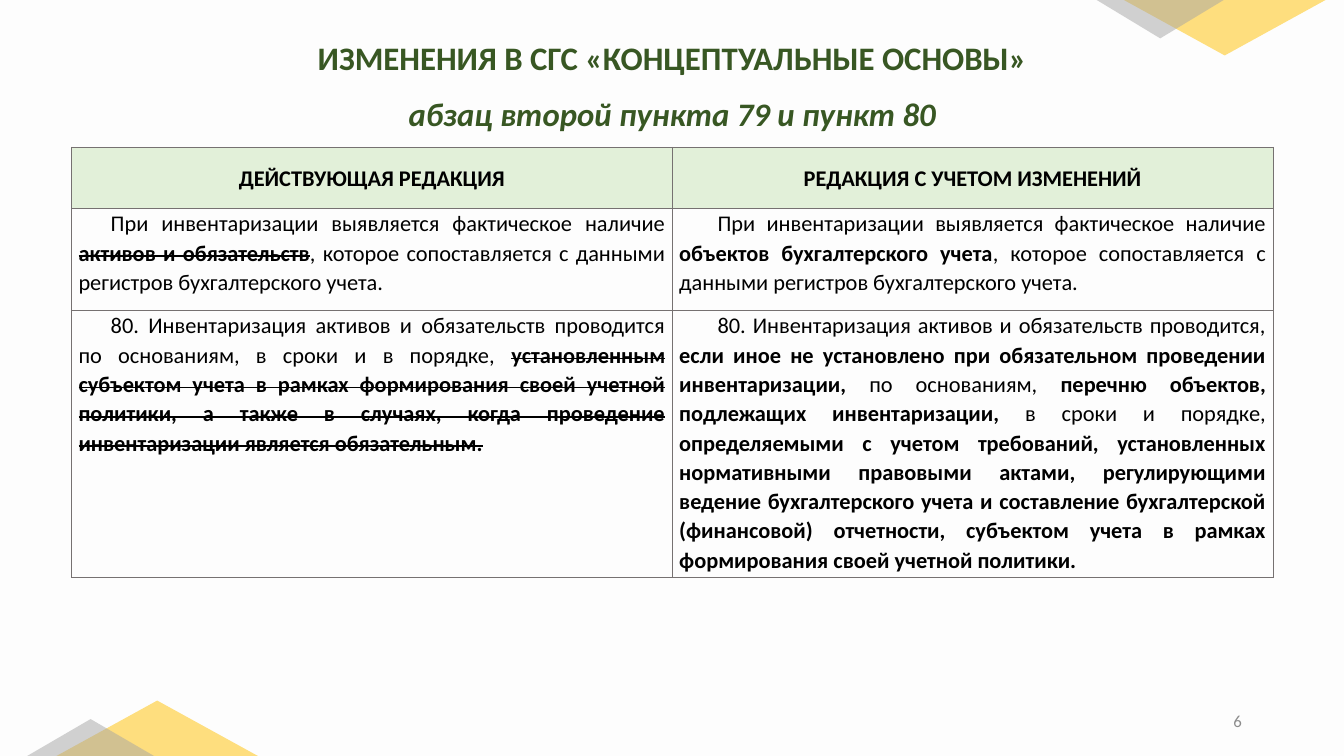
"""Build a slide that compares the current and the amended wording of a standard."""
from lxml import etree
from pptx import Presentation
from pptx import util as u
from pptx.dml.color import RGBColor
from pptx.enum import shapes, text
from pptx.oxml.ns import qn

THEME = {
    "font": "Calibri",
    "size": {"heading": 23.4, "table": 16, "number": 12},
    "color": {
        "page": "FDFDFD", "heading": "385723", "table": "000000", "number": "8C8C8C",
        "header": "E2F0D9", "border": "767171", "gold": "FFC000", "gray": "A5A5A5",
    },
}
STYLES = {
    "plain": {"bold": False, "italic": False},
    "new": {"bold": True, "italic": False},
    "old": {"bold": True, "italic": False},
    "accent": {"bold": True, "italic": True},
}


def color(name):
    return RGBColor.from_string(THEME["color"][name])


def write(frame, role, spans, layout, anchor):
    frame.word_wrap = True
    frame.vertical_anchor = anchor
    para = frame.paragraphs[0]
    for name, value in layout.items():
        setattr(para, name, value)
    for words, style in spans:
        span = para.add_run()
        span.text = words
        values = {"name": THEME["font"], "size": u.Pt(THEME["size"][role]), **STYLES[style]}
        for name, value in values.items():
            setattr(span.font, name, value)
        span.font.color.rgb = color(role)
        if style == "old":
            span._r.get_or_add_rPr().set("strike", "sngStrike")


deck = Presentation()
deck.slide_width, deck.slide_height = u.Pt(960), u.Pt(540)
page = deck.slides.add_slide(deck.slide_layouts[0])
page.background.fill.solid()
page.background.fill.fore_color.rgb = color("page")

middle = text.MSO_ANCHOR.MIDDLE
center = {"alignment": text.PP_ALIGN.CENTER, "space_before": u.Pt(0)}
headings = [
    (23, 39.6, 0.9, "ИЗМЕНЕНИЯ В СГС «КОНЦЕПТУАЛЬНЫЕ ОСНОВЫ»", "new"),
    (68.4, 30.2, 0.8, "абзац второй пункта 79 и пункт 80", "accent"),
]
for box, (top, height, spacing, words, style) in zip(page.placeholders, headings):
    box.left, box.top, box.width, box.height = u.Pt(40.3), u.Pt(top), u.Pt(879.8), u.Pt(height)
    box.text_frame.auto_size = text.MSO_AUTO_SIZE.NONE
    write(box.text_frame, "heading", [(words, style)], {**center, "line_spacing": spacing}, middle)

number = page.shapes.add_textbox(u.Pt(678.2), u.Pt(500.4), u.Pt(216), u.Pt(28.8))
write(number.text_frame, "number", [("6", "plain")], {"alignment": text.PP_ALIGN.RIGHT}, middle)

rows = [
    (43.9, [[("ДЕЙСТВУЮЩАЯ РЕДАКЦИЯ", "new")], [("РЕДАКЦИЯ С УЧЕТОМ ИЗМЕНЕНИЙ", "new")]]),
    (72.9, [
        [
            ("При инвентаризации выявляется фактическое наличие ", "plain"),
            ("активов и обязательств", "old"),
            (", которое сопоставляется с данными регистров бухгалтерского учета.", "plain"),
        ],
        [
            ("При инвентаризации выявляется фактическое наличие ", "plain"),
            ("объектов бухгалтерского учета", "new"),
            (", которое сопоставляется с данными регистров бухгалтерского учета.", "plain"),
        ],
    ]),
    (190.6, [
        [
            ("80. Инвентаризация активов и обязательств проводится по основаниям, "
             "в сроки и в порядке, ", "plain"),
            ("установленным субъектом учета в рамках формирования своей учетной политики, "
             "а также в случаях, когда проведение инвентаризации является обязательным.", "old"),
        ],
        [
            ("80. Инвентаризация активов и обязательств проводится, ", "plain"),
            ("если иное не установлено при обязательном проведении инвентаризации,", "new"),
            (" по основаниям, ", "plain"),
            ("перечню объектов, подлежащих инвентаризации,", "new"),
            (" в сроки и порядке, ", "plain"),
            ("определяемыми с учетом требований, установленных нормативными правовыми актами, "
             "регулирующими ведение бухгалтерского учета и составление бухгалтерской "
             "(финансовой) отчетности, субъектом учета в рамках формирования своей "
             "учетной политики.", "new"),
        ],
    ]),
]
indents = [23, 27.4]
margins = {"margin_left": 5, "margin_right": 5, "margin_top": 0, "margin_bottom": 0}
table = page.shapes.add_table(
    len(rows), 2, u.Pt(51.1), u.Pt(105.1), u.Pt(858.2), u.Pt(307.4)
).table
table.first_row = table.horz_banding = False
for column in table.columns:
    column.width = u.Pt(429.1)
for r, (height, cells) in enumerate(rows):
    table.rows[r].height = u.Pt(height)
    for c, spans in enumerate(cells):
        cell = table.cell(r, c)
        for name, value in margins.items():
            setattr(cell, name, u.Pt(value))
        borders = cell._tc.get_or_add_tcPr()
        for side in ("a:lnL", "a:lnR", "a:lnT", "a:lnB"):
            line = etree.SubElement(borders, qn(side), w=str(u.Pt(0.25)))
            paint = etree.SubElement(line, qn("a:solidFill"))
            etree.SubElement(paint, qn("a:srgbClr"), val=THEME["color"]["border"])
        if r == 0:
            cell.fill.solid()
            cell.fill.fore_color.rgb = color("header")
            layout, anchor = center, middle
        else:
            cell.fill.background()
            layout, anchor = {"alignment": text.PP_ALIGN.JUSTIFY}, text.MSO_ANCHOR.TOP
        cell.vertical_anchor = anchor
        write(cell.text_frame, "table", spans, {**layout, "line_spacing": 1.07}, anchor)
        if r:
            cell.text_frame.paragraphs[0]._p.get_or_add_pPr().set("indent", str(u.Pt(indents[c])))

triangles = [
    (40.3, 500.4, 144, 39.6, "gold", 0),
    (19.4, 513.6, 90.7, 26.4, "gray", 0),
    (802.8, 0, 144, 39.6, "gold", 180),
    (783.4, 0, 90.7, 27.4, "gray", 180),
]
for left, top, width, height, tint, angle in triangles:
    triangle = page.shapes.add_shape(
        shapes.MSO_SHAPE.ISOSCELES_TRIANGLE, u.Pt(left), u.Pt(top), u.Pt(width), u.Pt(height)
    )
    triangle.rotation = angle
    triangle.shadow.inherit = False
    triangle.line.fill.background()
    triangle.fill.solid()
    triangle.fill.fore_color.rgb = color(tint)
    paint = triangle._element.spPr.find(qn("a:solidFill"))
    etree.SubElement(paint[0], qn("a:alpha"), val="50000")

deck.save("out.pptx")
